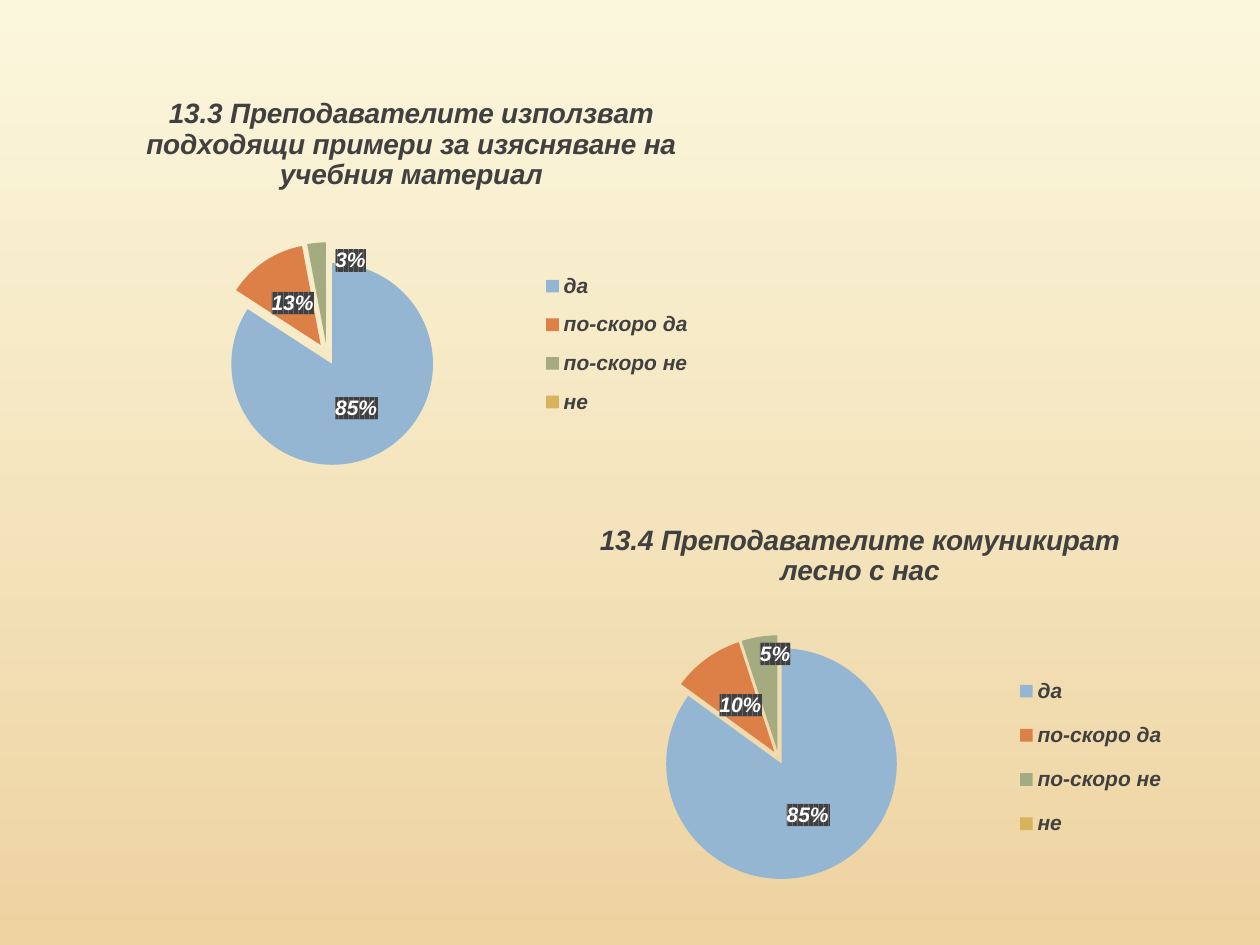
import copy

import lxml.etree
import pptx
import pptx.chart.data
import pptx.dml.color
import pptx.enum.chart
import pptx.oxml
import pptx.oxml.ns
import pptx.util
from pptx.util import Inches

FONT = "Arial"
DARK = "404040"
ANSWERS = ("да", "по-скоро да", "по-скоро не", "не")
ANSWER_COLOURS = ("94B6D2", "DD8047", "A5AB81", "D8B25C")
SMALL_SLICE = 2
qn = pptx.oxml.ns.qn


def rgb(colour):
    return pptx.dml.color.RGBColor.from_string(colour)


def chart_xml(text):
    """Parse a chart element written with the c: and a: prefixes."""
    head, tail = text.split(">", 1)
    slash = "/" if head.endswith("/") else ""
    names = pptx.oxml.ns.nsdecls("c", "a")
    return pptx.oxml.parse_xml(f"{head.rstrip('/')} {names}{slash}>{tail}")


def style_font(font, size, colour):
    font.name = FONT
    font.size = pptx.util.Pt(size)
    font.bold = font.italic = True
    font.color.rgb = rgb(colour)


def manual_layout(left, top, width, height, inner=False):
    """Layout element in fractions of the chart's size."""
    target = '<c:layoutTarget val="inner"/>' if inner else ""
    return chart_xml(
        f'<c:layout><c:manualLayout>{target}'
        f'<c:xMode val="edge"/><c:yMode val="edge"/>'
        f'<c:x val="{left}"/><c:y val="{top}"/>'
        f'<c:w val="{width}"/><c:h val="{height}"/>'
        f'</c:manualLayout></c:layout>')


def remove_layout(element):
    for old in element.findall(qn("c:layout")):
        element.remove(old)


def paint_background(slide):
    fill = slide.background.fill
    fill.gradient()
    fill.gradient_angle = 270
    for stop, colour in zip(fill.gradient_stops, ("FBF7DD", "EED3A1")):
        stop.color.rgb = rgb(colour)


def style_slices(series, explosion):
    for index, colour in enumerate(ANSWER_COLOURS):
        fill = series.points[index].format.fill
        fill.solid()
        fill.fore_color.rgb = rgb(colour)
    first_point = series._element.find(qn("c:dPt"))
    first_point.addprevious(chart_xml(f'<c:explosion val="{explosion}"/>'))


def style_labels(series, shift):
    """Labels on a striped ground; the small slice's label is shifted.

    The values are rounded percentages, so they are shown as they stand.
    """
    labels = series.data_labels
    labels.show_value = True
    labels.show_percentage = False
    labels.number_format = '0"%"'
    labels.number_format_is_linked = False
    labels.position = pptx.enum.chart.XL_LABEL_POSITION.CENTER
    style_font(labels.font, 12, "FFFFFF")
    element = labels._element
    element.find(qn("c:txPr")).addprevious(chart_xml(
        '<c:spPr><a:pattFill prst="dkVert">'
        '<a:fgClr><a:srgbClr val="404040"/></a:fgClr>'
        '<a:bgClr><a:srgbClr val="666666"/></a:bgClr>'
        '</a:pattFill></c:spPr>'))

    left, top = shift
    label = chart_xml(
        f'<c:dLbl><c:idx val="{SMALL_SLICE}"/><c:layout><c:manualLayout>'
        f'<c:x val="{left}"/><c:y val="{top}"/>'
        f'</c:manualLayout></c:layout></c:dLbl>')
    for child in element:
        if child.tag != qn("c:showLeaderLines"):
            label.append(copy.deepcopy(child))
    element.insert(0, label)


def add_pie(slide, title, values, place, explosion, plot, legend, shift):
    data = pptx.chart.data.CategoryChartData()
    data.categories = ANSWERS
    data.add_series("Series 1", values)
    chart = slide.shapes.add_chart(
        pptx.enum.chart.XL_CHART_TYPE.PIE,
        *(Inches(length) for length in place), data).chart
    style_font(chart.font, 10, "000000")

    chart.has_title = True
    span = chart.chart_title.text_frame.paragraphs[0].add_run()
    span.text = title
    style_font(span.font, 16, DARK)
    chart.chart_title.include_in_layout = False

    chart.has_legend = True
    chart.legend.position = pptx.enum.chart.XL_LEGEND_POSITION.RIGHT
    chart.legend.include_in_layout = False
    style_font(chart.legend.font, 12, DARK)
    remove_layout(chart.legend._element)
    position = chart.legend._element.find(qn("c:legendPos"))
    position.addnext(manual_layout(*legend))

    area = chart._chartSpace.chart.plotArea
    remove_layout(area)
    area.insert(0, manual_layout(*plot, inner=True))

    chart.plots[0].vary_by_categories = True
    series = chart.plots[0].series[0]
    style_slices(series, explosion)
    style_labels(series, shift)


def main():
    deck = pptx.Presentation()
    deck.slide_width, deck.slide_height = Inches(10), Inches(7.5)
    slide = deck.slides.add_slide(deck.slide_layouts[6])
    paint_background(slide)
    add_pie(
        slide,
        "13.3 Преподавателите използват подходящи примери "
        "за изясняване на учебния материал",
        (85, 13, 3, None), place=(0.35, 0.6, 5.83, 3.23), explosion=11,
        plot=(0.23, 0.41, 0.31, 0.55), legend=(0.67, 0.45, 0.22, 0.42),
        shift=(0.04, -0.08))
    add_pie(
        slide,
        "13.4 Преподавателите комуникират лесно с нас",
        (85, 10, 5, None), place=(4.13, 3.99, 5.39, 3.16), explosion=6,
        plot=(0.2, 0.33, 0.36, 0.62), legend=(0.73, 0.39, 0.22, 0.5),
        shift=(0.01, -0.1))
    deck.save("out.pptx")


if __name__ == "__main__":
    main()
